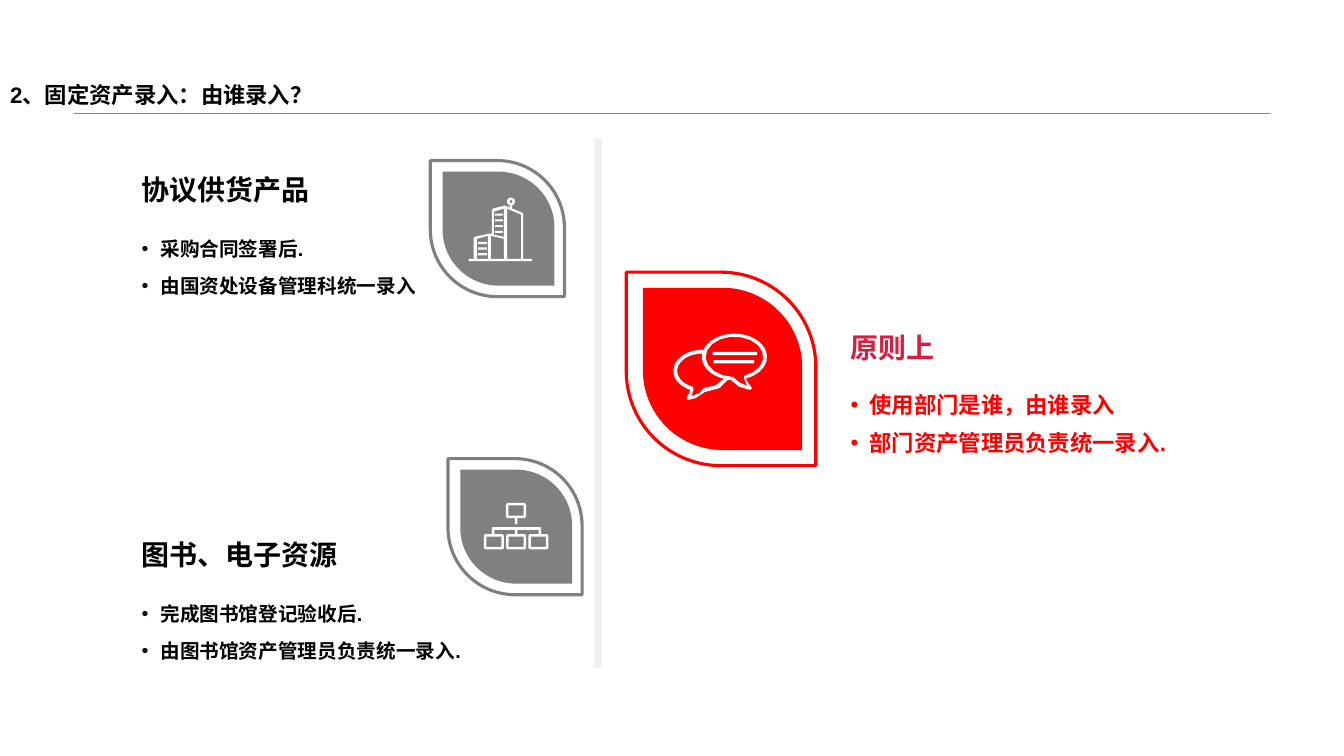
from math import cos, radians, sin

from pptx import Presentation
from pptx.dml.color import RGBColor
from pptx.enum.shapes import MSO_CONNECTOR, MSO_SHAPE as SHAPE
from pptx.enum.text import MSO_ANCHOR as ANCHOR, PP_ALIGN as ALIGN
from pptx.oxml.ns import qn
from pptx.util import Pt

BLACK = RGBColor(0, 0, 0)
WHITE = RGBColor(255, 255, 255)
GRAY = RGBColor(128, 128, 128)
PALE = RGBColor(240, 240, 240)
PALE_EDGE = RGBColor(242, 242, 242)
RED = RGBColor(255, 0, 0)
CRIMSON = RGBColor(214, 30, 66)
FONT = "Arial"


def arc(center_x, center_y, radius_x, radius_y, start, end, steps=16):
    """Points on an ellipse between two angles in degrees."""
    angles = [radians(start + (end - start) * i / steps) for i in range(steps + 1)]
    return [(center_x + radius_x * cos(a), center_y + radius_y * sin(a)) for a in angles]


def bar(left, top, width, height):
    """Corners of an upright rectangle."""
    right, bottom = left + width, top + height
    return [(left, top), (right, top), (right, bottom), (left, bottom)]


def node(left, top):
    """Outer and inner outline of a chart box with clipped corners."""
    right, bottom, cut = left + 14.4, top + 10.8, 1
    outer = [(left + cut, top), (right - cut, top), (right, top + cut),
             (right, bottom - cut), (right - cut, bottom), (left + cut, bottom),
             (left, bottom - cut), (left, top + cut)]
    return [outer, bar(left + 1.8, top + 1.8, 10.8, 7.2)]


# Content
TITLE = "2、固定资产录入：由谁录入？"
# heading, left, top, width, heading colour, bullet colour, bullet size, spacing, bullets
SECTIONS = [
    ("协议供货产品", 94, 115, 212.4, BLACK, BLACK, 14, 1.6,
     ["采购合同签署后.", "由国资处设备管理科统一录入"]),
    ("图书、电子资源", 94, 375.8, 255.6, BLACK, BLACK, 14, 1.6,
     ["完成图书馆登记验收后.", "由图书馆资产管理员负责统一录入."]),
    ("原则上", 600.5, 228.2, 290.9, CRIMSON, RED, 16, 1.4,
     ["使用部门是谁，由谁录入", "部门资产管理员负责统一录入."]),
]
# centre x, centre y, inner shift, outer size, inner size, colour
LEAVES = [
    (355.3, 163.3, 0.8, (97.2, 95.8), (81.4, 79.9), GRAY),
    (515, 263.5, 1.1, (138.2, 135.4), (115.9, 113.8), RED),
    (367.9, 376.2, 0.8, (97.2, 95.8), (81.4, 79.9), GRAY),
]

# Icon outlines, in points from each icon's own corner
skyline = ([(0, 43.9), (3.6, 43.9), (3.6, 28.8), (4.3, 28.1), (14.4, 25.9), (16.6, 25.9),
            (16.6, 9.4), (17.3, 7.9), (25.9, 5.8), (29.5, 7.2)]
           + arc(30.2, 2.9, 2.9, 2.9, 105, 435, 10)
           + [(31, 7.9), (38.2, 10.8), (38.9, 11.5), (38.9, 43.9), (45.4, 43.9),
              (45.4, 45.4), (0, 45.4)])
BUILDINGS = [
    skyline,
    arc(30.2, 2.9, 1.1, 1.1, 0, 360, 8),
    [(27.4, 7.9), (27.4, 43.9), (37.4, 43.9), (37.4, 12.2)],
    [(25.2, 7.9), (18, 10.1), (18, 26.6), (25.2, 28.1)],
    [(15.8, 27.4), (15.8, 43.9), (25.2, 43.9), (25.2, 29.5)],
    [(13.7, 27.4), (5.8, 29.5), (5.8, 43.9), (13.7, 43.9)],
]
BUILDINGS += [bar(18.7, 11.5 + 4.1 * i, 5.8, 1.5) for i in range(4)]
BUILDINGS += [bar(6.5, 31.7 + 4 * i, 6.5, 1.6) for i in range(3)]

both_bubbles = (arc(43.6, 16.6, 23.3, 16.6, 193, 430)
                + [(53.3, 35), (56.2, 38.9), (54.7, 40.3), (47, 38), (41, 33.1),
                   (38.9, 33.1), (33, 38.9), (22.3, 41.8), (16, 46), (10.1, 47.5),
                   (9.4, 46.1), (12.2, 40.3)]
                + arc(21, 26.6, 21, 15.1, 115, 270))
back_hole = (arc(43.6, 16.6, 23.3, 16.6, 185, 109, 8)
             + [(30, 37), (21.6, 38.9), (18.7, 42.5), (13, 44.6), (14.4, 39.6)]
             + arc(21, 26.6, 18.3, 12.4, 113, 268))
front_hole = (arc(43.6, 16.6, 20.6, 14.4, 93, 430)
              + [(50.4, 31.7), (52.6, 37.4), (46.8, 34.6)])
CHAT = [both_bubbles, back_hole, front_hole,
        bar(28.1, 13, 31.7, 2.4), bar(28.8, 18.9, 28.8, 2.4)]

CHART = [
    [(5.8, 22.3), (5.8, 17.9), (6.5, 17.3), (40.3, 17.3), (41, 17.9), (41, 22.3),
     (39.2, 22.3), (39.2, 19.2), (23.9, 19.2), (23.9, 22.3), (22.2, 22.3),
     (22.2, 19.2), (7.6, 19.2), (7.6, 22.3)],
    bar(22.2, 10.8, 1.7, 4.3),
]
for x, y in [(15.8, 0)] + [(15.9 * i, 22.3) for i in range(3)]:
    CHART += node(x, y)

# left, top, outlines
ICONS = [(334.8, 141.1, BUILDINGS), (481, 238.3, CHAT), (345.6, 359.3, CHART)]

deck = Presentation()
deck.slide_width, deck.slide_height = Pt(960), Pt(540)
page = deck.slides.add_slide(deck.slide_layouts[5])


def paint(shape, fill=None, line=None, width=1):
    shape.shadow.inherit = False
    if fill is None:
        shape.fill.background()
    else:
        shape.fill.solid()
        shape.fill.fore_color.rgb = fill
    if line is None:
        shape.line.fill.background()
    else:
        shape.line.color.rgb = line
        shape.line.width = Pt(width)


def add_icon(left, top, outlines):
    builder = None
    for outline in outlines:
        start, *rest = [(Pt(x), Pt(y)) for x, y in outline]
        if builder is None:
            builder = page.shapes.build_freeform(*start)
        else:
            builder.move_to(*start)
        builder.add_line_segments(rest, close=True)
    paint(builder.convert_to_shape(Pt(left), Pt(top)), fill=WHITE)


def add_leaf(center_x, center_y, size, **colors):
    width, height = size
    leaf = page.shapes.add_shape(SHAPE.ROUND_2_DIAG_RECTANGLE, Pt(center_x - width / 2),
                                 Pt(center_y - height / 2), Pt(width), Pt(height))
    leaf.adjustments[0], leaf.adjustments[1] = 0.5, 0
    leaf.rotation = 270
    paint(leaf, **colors)


def add_span(para, text, size, color):
    span = para.add_run()
    span.text = text
    span.font.name, span.font.size, span.font.bold = FONT, Pt(size), True
    span.font.color.rgb = color


def add_box(left, top, width, height, anchor):
    frame = page.shapes.add_textbox(Pt(left), Pt(top), Pt(width), Pt(height)).text_frame
    frame.word_wrap = True
    frame.vertical_anchor = anchor
    return frame


def add_bullet(para):
    properties = para._p.get_or_add_pPr()
    properties.set("marL", str(Pt(13.5)))
    properties.set("indent", str(-Pt(13.5)))
    for tag, name, value in (("a:buFont", "typeface", FONT), ("a:buChar", "char", "•")):
        properties.append(properties.makeelement(qn(tag), {name: value}))


# Title with its rule
title = page.shapes.title
title.left, title.top, title.width, title.height = Pt(0), Pt(49), Pt(467.3), Pt(37.4)
title.text_frame.vertical_anchor = ANCHOR.MIDDLE
title.text_frame.paragraphs[0].alignment = ALIGN.LEFT
add_span(title.text_frame.paragraphs[0], TITLE, 16, BLACK)
rule = page.shapes.add_connector(MSO_CONNECTOR.STRAIGHT, Pt(52.9), Pt(81), Pt(907.2), Pt(81))
rule.line.color.rgb = GRAY
rule.line.width = Pt(0.25)
rule_properties = rule._element.spPr
rule_properties.append(rule_properties.makeelement(qn("a:effectLst"), {}))

# Divider
divider = page.shapes.add_shape(SHAPE.RECTANGLE, Pt(424.8), Pt(98.8), Pt(4.7), Pt(378))
paint(divider, PALE, PALE_EDGE)

# Leaves and icons
for center_x, center_y, shift, outer, inner, color in LEAVES:
    add_leaf(center_x, center_y, outer, line=color, width=2.25)
    add_leaf(center_x + shift, center_y, inner, fill=color)
for icon in ICONS:
    add_icon(*icon)

# Headings and bullets
for heading, left, top, width, head_color, color, size, spacing, bullets in SECTIONS:
    frame = add_box(left, top, width, 40.3, ANCHOR.MIDDLE)
    add_span(frame.paragraphs[0], heading, 20, head_color)
    frame = add_box(left, top + 40.3, width, 60.5, ANCHOR.TOP)
    for number, text in enumerate(bullets):
        para = frame.add_paragraph() if number else frame.paragraphs[0]
        add_bullet(para)
        para.line_spacing = spacing
        add_span(para, text, size, color)

deck.save("out.pptx")
